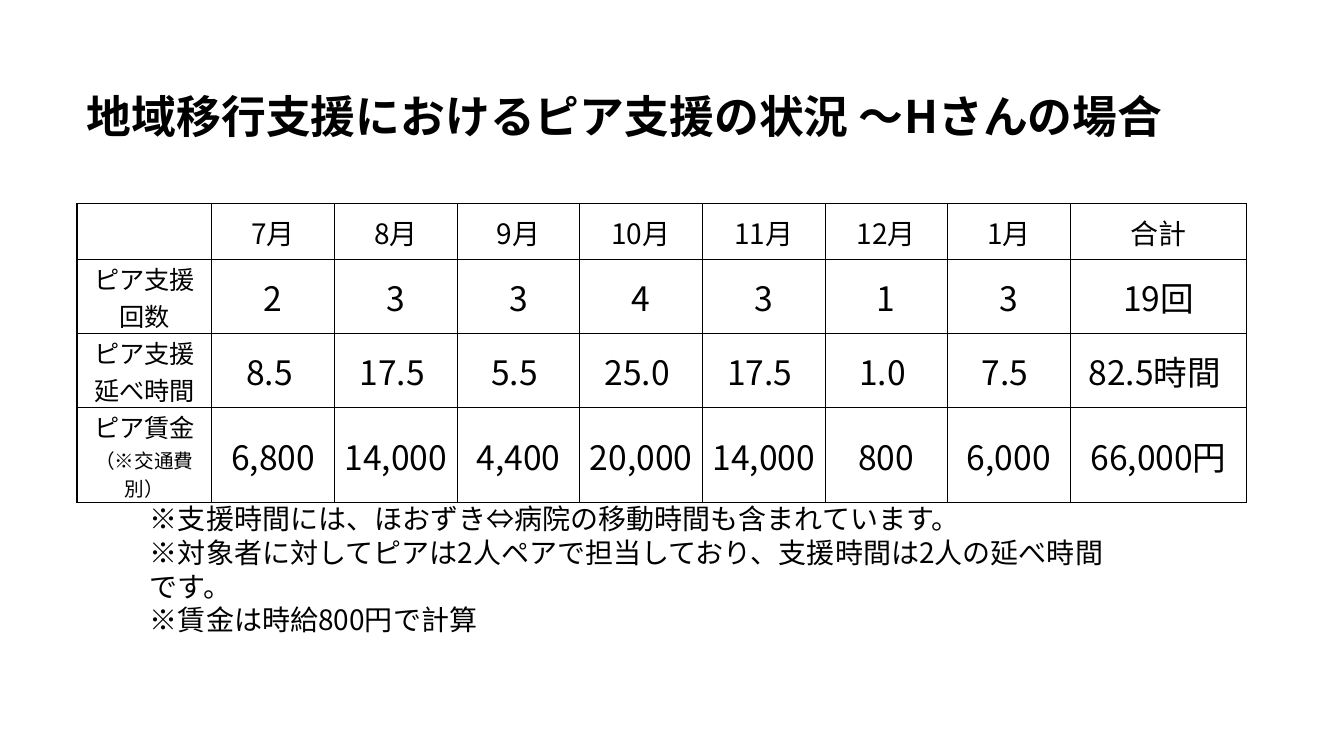
from lxml.etree import SubElement
from pptx import Presentation
from pptx.enum.text import MSO_ANCHOR, PP_ALIGN
from pptx.oxml.ns import qn
from pptx.dml.color import RGBColor
from pptx.util import Cm, Pt

FONT = "Noto Sans CJK JP"
COLORS = {"ink": "000000"}

TITLE = "地域移行支援におけるピア支援の状況 ～Hさんの場合"
HEADER = ["", "7月", "8月", "9月", "10月", "11月", "12月", "1月", "合計"]
# Each row label is a list of paragraphs, each a list of (line, size).
ROWS = [
    ([[("ピア支援", 18)], [("回数", 18)]],
     ["2", "3", "3", "4", "3", "1", "3", "19回"]),
    ([[("ピア支援", 18)], [("延べ時間", 18)]],
     ["8.5 ", "17.5 ", "5.5 ", "25.0 ", "17.5 ", "1.0 ", "7.5 ", "82.5時間 "]),
    ([[("ピア賃金", 18), ("（※交通費別）", 14)]],
     ["6,800", "14,000", "4,400", "20,000", "14,000", "800", "6,000", "66,000円"]),
]
NOTES = [
    "※支援時間には、ほおずき⇔病院の移動時間も含まれています。",
    "※対象者に対してピアは2人ペアで担当しており、支援時間は2人の延べ時間です。",
    "※賃金は時給800円で計算",
]

LABEL_WIDTH, MONTH_WIDTH, TOTAL_WIDTH = 3.4, 3.09, 4.45
HEADER_HEIGHT, ROW_HEIGHT = 1.4, 1.8
COLUMN_WIDTHS = [LABEL_WIDTH] + [MONTH_WIDTH] * (len(HEADER) - 2) + [TOTAL_WIDTH]
ROW_HEIGHTS = [HEADER_HEIGHT] + [ROW_HEIGHT] * len(ROWS)
ROW_EDGES = {0, 1, len(ROW_HEIGHTS)}
COLUMN_EDGES = {0, 1, len(HEADER) - 1, len(HEADER)}


def write(frame, paragraphs, align=PP_ALIGN.LEFT, bold=False, spacing=None):
    """Fill a frame with paragraphs, each a list of (line, size) joined by line breaks."""
    for index, lines in enumerate(paragraphs):
        para = frame.add_paragraph() if index else frame.paragraphs[0]
        para.alignment = align
        para.line_spacing = spacing
        for number, (line, size) in enumerate(lines):
            if number:
                para.add_line_break()
            span = para.add_run()
            span.text = line
            span.font.size = Pt(size)
            span.font.bold = bold
            span.font.name = FONT
            span.font.color.rgb = RGBColor.from_string(COLORS["ink"])
            SubElement(span.font._element, qn("a:ea"), typeface=FONT)


def add_text(page, left, top, width, height, paragraphs, anchor=MSO_ANCHOR.TOP, **style):
    box = page.shapes.add_textbox(Cm(left), Cm(top), Cm(width), Cm(height))
    box.text_frame.word_wrap = True
    box.text_frame.vertical_anchor = anchor
    write(box.text_frame, paragraphs, **style)


def set_borders(cell, row, column):
    """Draw 1 pt lines around the header, label and total blocks, 0.5 pt inside them."""
    sides = {
        "a:lnL": column in COLUMN_EDGES,
        "a:lnR": column + 1 in COLUMN_EDGES,
        "a:lnT": row in ROW_EDGES,
        "a:lnB": row + 1 in ROW_EDGES,
    }
    properties = cell._tc.get_or_add_tcPr()
    for tag, heavy in sides.items():
        line = SubElement(properties, qn(tag), w=str(Pt(1 if heavy else 0.5)))
        fill = SubElement(line, qn("a:solidFill"))
        SubElement(fill, qn("a:srgbClr"), val=COLORS["ink"])


def add_support_table(page):
    grid = [[[[(month, 20)]] if month else [] for month in HEADER]]
    grid += [[label] + [[[(value, 24)]] for value in values] for label, values in ROWS]
    frame = page.shapes.add_table(
        len(grid), len(HEADER), Cm(1.94), Cm(5.13),
        Cm(sum(COLUMN_WIDTHS)), Cm(sum(ROW_HEIGHTS)))
    table = frame.table
    table.first_row = table.horz_banding = False
    for column, width in zip(table.columns, COLUMN_WIDTHS):
        column.width = Cm(width)
    for row, height in zip(table.rows, ROW_HEIGHTS):
        row.height = Cm(height)
    for row, contents in enumerate(grid):
        for column, paragraphs in enumerate(contents):
            cell = table.cell(row, column)
            cell.vertical_anchor = MSO_ANCHOR.MIDDLE
            cell.margin_left = cell.margin_right = cell.margin_top = Cm(0.03)
            cell.margin_bottom = 0
            set_borders(cell, row, column)
            cell.fill.background()
            write(cell.text_frame, paragraphs, align=PP_ALIGN.CENTER)


def main():
    deck = Presentation()
    deck.slide_width, deck.slide_height = Cm(33.87), Cm(19.05)
    page = deck.slides.add_slide(deck.slide_layouts[6])
    add_support_table(page)
    add_text(page, 3.53, 12.52, 25.2, 3.68, [[(note, 20)] for note in NOTES],
             spacing=Pt(24))
    add_text(page, 1.94, 1.73, 28.47, 2, [[(TITLE, 32)]],
             anchor=MSO_ANCHOR.BOTTOM, bold=True, spacing=0.9)
    deck.save("out.pptx")


if __name__ == "__main__":
    main()
